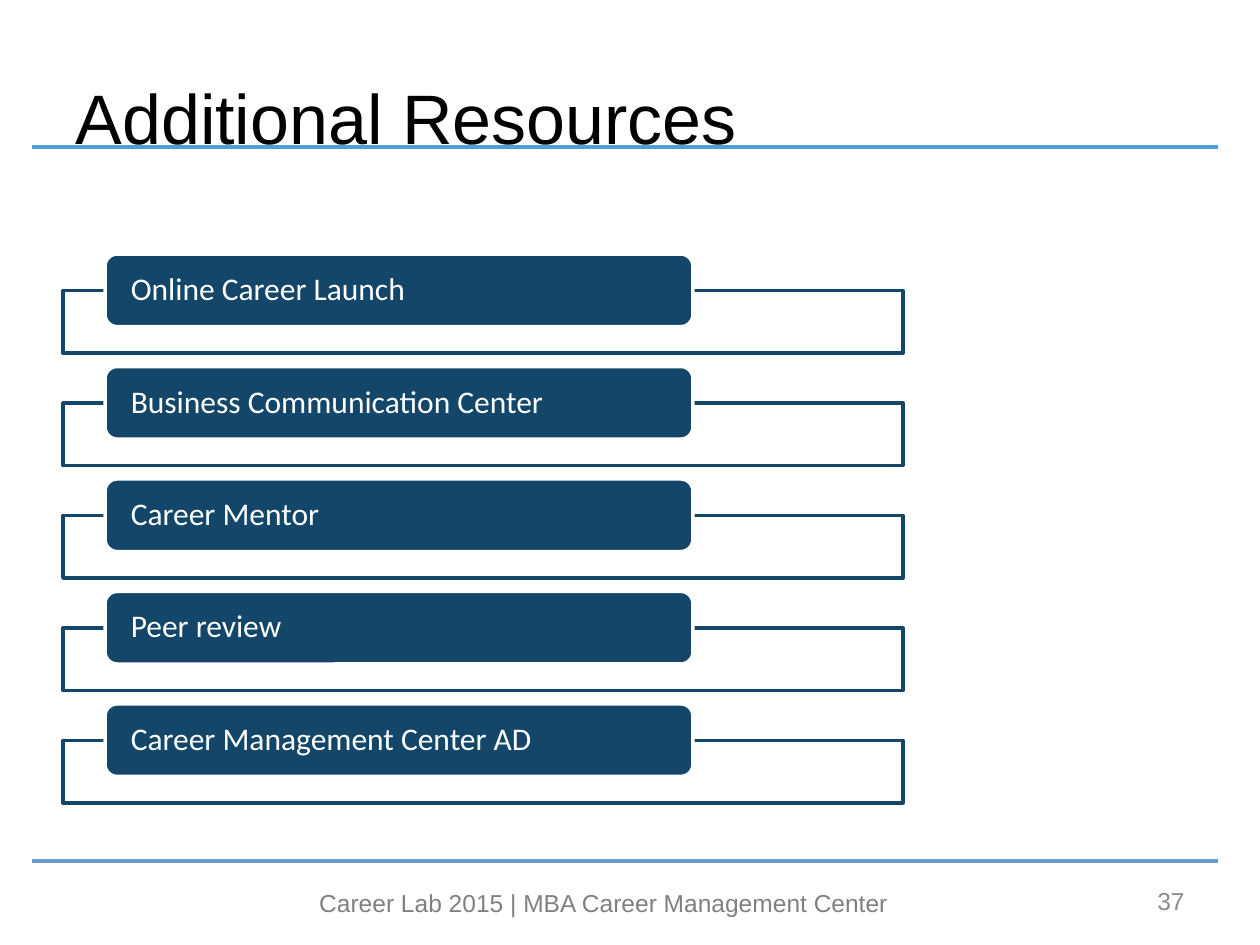
from dataclasses import dataclass

from lxml import etree
from pptx import Presentation
from pptx.dml.color import RGBColor
from pptx.enum.shapes import MSO_CONNECTOR, MSO_SHAPE
from pptx.enum.text import MSO_ANCHOR, PP_ALIGN
from pptx.oxml.ns import qn
from pptx.util import Pt

LINE = MSO_CONNECTOR.STRAIGHT
RECT = MSO_SHAPE.RECTANGLE
ROUND = MSO_SHAPE.ROUNDED_RECTANGLE
TOP, MIDDLE = MSO_ANCHOR.TOP, MSO_ANCHOR.MIDDLE
LEFT, CENTER, RIGHT = PP_ALIGN.LEFT, PP_ALIGN.CENTER, PP_ALIGN.RIGHT
NAVY, WHITE, BLACK = "134668", "FFFFFF", "000000"
PITCH = 64.26


@dataclass
class Box:
    left: float
    top: float
    width: float
    height: float

    def lengths(self):
        return Pt(self.left), Pt(self.top), Pt(self.width), Pt(self.height)


@dataclass
class Rule:
    y: float
    color: str


@dataclass
class Label:
    text: str
    box: Box
    color: str
    align: PP_ALIGN
    anchor: MSO_ANCHOR


RULES = [Rule(492, "6699CC"), Rule(84, "4DA0D7")]
NOTES = [
    Label("Career Lab 2015 | MBA Career Management Center",
          Box(174, 504, 342, 24.5), "808080", CENTER, TOP),
    Label("37", Box(516, 500, 168, 29), "8C8C8C", RIGHT, MIDDLE),
]
ITEMS = [
    "Online Career Launch",
    "Business Communication Center",
    "Career Mentor",
    "Peer review",
    "Career Management Center AD",
]


def paint(target, color: str) -> None:
    target.rgb = RGBColor.from_string(color)


def write(frame, text: str, size: float, font: str, color: str,
          align: PP_ALIGN, anchor: MSO_ANCHOR) -> None:
    frame.word_wrap = True
    frame.vertical_anchor = anchor
    para = frame.paragraphs[0]
    para.alignment = align
    run = para.add_run()
    run.text = text
    run.font.size = Pt(size)
    run.font.name = font
    paint(run.font.color, color)


def add_rule(slide, rule: Rule):
    line = slide.shapes.add_connector(
        LINE, Pt(18), Pt(rule.y), Pt(696), Pt(rule.y))
    paint(line.line.color, rule.color)
    line.line.width = Pt(2)
    etree.SubElement(line.element.spPr, qn("a:effectLst"))
    return line


def add_block(slide, kind: MSO_SHAPE, box: Box, fill: str, edge: str):
    shape = slide.shapes.add_shape(kind, *box.lengths())
    shape.shadow.inherit = False
    shape.fill.solid()
    paint(shape.fill.fore_color, fill)
    paint(shape.line.color, edge)
    shape.line.width = Pt(2)
    return shape


def add_item(slide, text: str, row: int) -> None:
    shift = row * PITCH
    frame = add_block(slide, RECT, Box(36, 166, 480, 35.8), WHITE, NAVY)
    frame.top = Pt(166 + shift)
    tint = frame.element.spPr.find(qn("a:solidFill"))[0]
    etree.SubElement(tint, qn("a:alpha"), val="90000")
    tab = add_block(slide, ROUND, Box(60, 145.2 + shift, 336, 41.5), NAVY, WHITE)
    body = tab.text_frame
    body.margin_left = body.margin_right = Pt(12.7)
    body.margin_top = body.margin_bottom = 0
    write(body, text, 18, "Calibri", WHITE, LEFT, MIDDLE)
    body.paragraphs[0].line_spacing = 0.9


def add_label(slide, label: Label) -> None:
    box = slide.shapes.add_textbox(*label.box.lengths())
    write(box.text_frame, label.text, 14, "Arial",
          label.color, label.align, label.anchor)


def main() -> None:
    deck = Presentation()
    deck.slide_width, deck.slide_height = Pt(720), Pt(540)
    slide = deck.slides.add_slide(deck.slide_layouts[5])
    title = slide.shapes.title
    title.left, title.top, title.width, title.height = Box(
        36, 21.5, 648, 90).lengths()
    write(title.text_frame, "Additional Resources", 40, "Arial",
          BLACK, LEFT, MIDDLE)
    for rule in RULES:
        line = add_rule(slide, rule)
        title.element.addprevious(line.element)
    for label in NOTES:
        add_label(slide, label)
    for row, text in enumerate(ITEMS):
        add_item(slide, text, row)
    deck.save("out.pptx")


if __name__ == "__main__":
    main()
